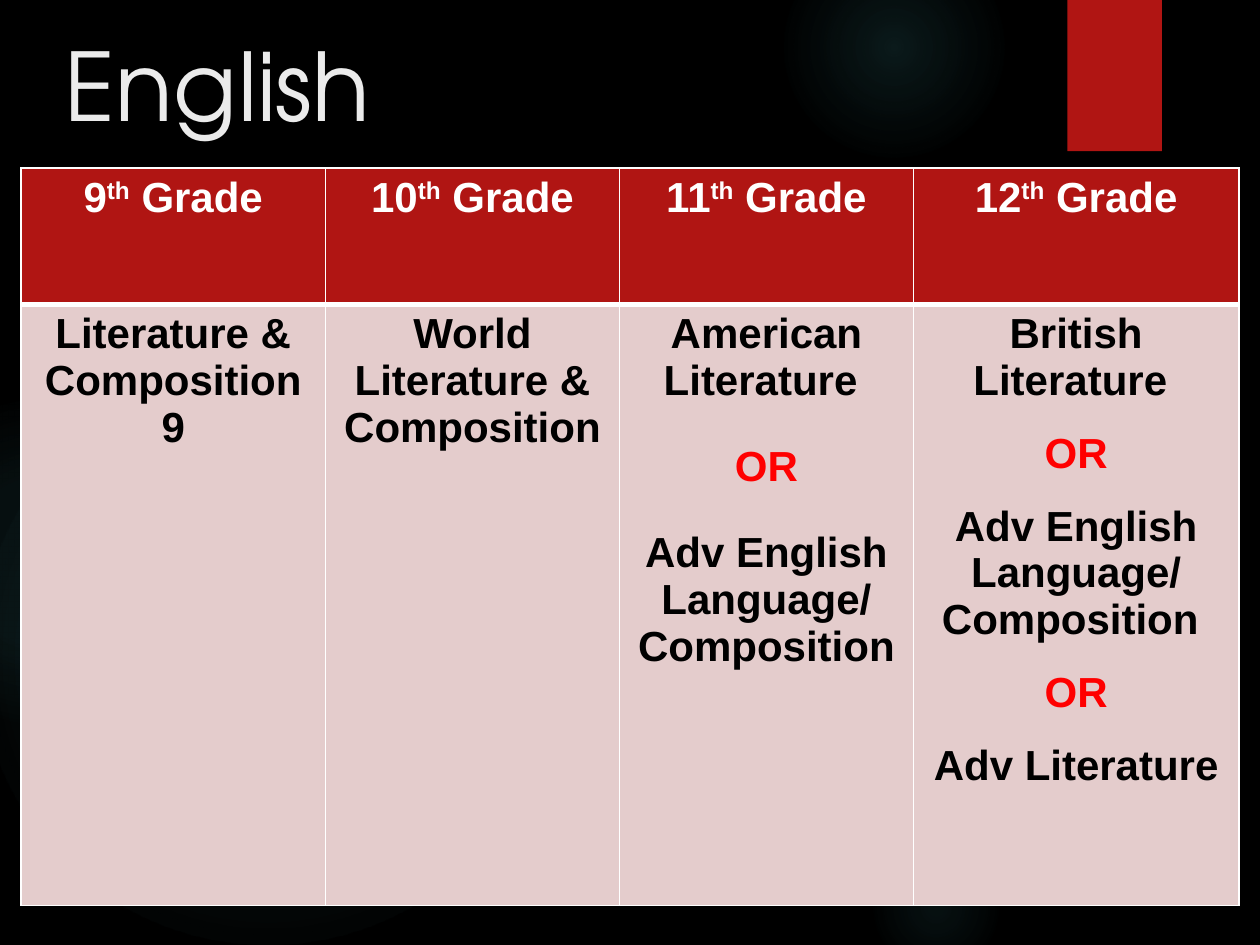
from lxml import etree
from pptx import Presentation
from pptx.dml.color import RGBColor
from pptx.enum.shapes import MSO_SHAPE as Shape
from pptx.enum.text import MSO_ANCHOR as Anchor, PP_ALIGN as Align
from pptx.oxml import parse_xml
from pptx.oxml.ns import nsdecls, qn
from pptx.util import Pt

BLACK = RGBColor(0x00, 0x00, 0x00)
WHITE = RGBColor(0xFF, 0xFF, 0xFF)
PALE = RGBColor(0xEB, 0xEB, 0xEB)
RED = RGBColor(0xB0, 0x15, 0x13)
BRIGHT = RGBColor(0xFF, 0x00, 0x00)
PINK = RGBColor(0xE4, 0xCC, 0xCC)
TEAL = RGBColor(0x50, 0xB9, 0xC1)

# left, top, size, then (position %, opacity %) stops
GLOWS = [
    (448, -36, 126, [(0, 14), (36, 7), (73, 0)]),
    (496, 480, 78, [(0, 9), (36, 5), (66, 0)]),
    (-12, 210, 330, [(0, 11), (36, 10), (75, 0)]),
    (-66, 228, 186, [(0, 8), (36, 8), (72, 0)]),
]
# grade, column width, gap around OR, courses
GRADES = [
    ("9", 174, 0, ["Literature & Composition 9"]),
    ("10", 168, 0, ["World Literature & Composition"]),
    ("11", 168, 22.3, ["American Literature ", "OR",
                       "Adv English Language/", "Composition"]),
    ("12", 186, 14.8, ["British Literature ", "OR", "Adv English Language/",
                       "Composition ", "OR", "Adv Literature"]),
]
ROWS = (78, 343.5)
LEFT, TOP = 12, 96


def write(para, text, size=24, font="Arial", color=BLACK, bold=True, raised=0):
    run = para.add_run()
    run.text = text
    run.font.size, run.font.name, run.font.bold = Pt(size), font, bold
    run.font.color.rgb = color
    if raised:
        run._r.get_or_add_rPr().set("baseline", str(raised * 1000))


def add_shape(slide, kind, left, top, width, height, color):
    shape = slide.shapes.add_shape(kind, Pt(left), Pt(top), Pt(width), Pt(height))
    shape.shadow.inherit = False
    shape.fill.solid()
    shape.fill.fore_color.rgb = color
    shape.line.fill.background()
    return shape


def add_glow(slide, left, top, size, stops):
    """Draw a circle that fades out from its centre."""
    glow = add_shape(slide, Shape.OVAL, left, top, size, size, TEAL)
    marks = "".join(
        f'<a:gs pos="{pos * 1000}"><a:srgbClr val="{TEAL}">'
        f'<a:alpha val="{alpha * 1000}"/></a:srgbClr></a:gs>'
        for pos, alpha in stops)
    fade = parse_xml(
        f'<a:gradFill {nsdecls("a")} rotWithShape="1"><a:gsLst>{marks}</a:gsLst>'
        '<a:path path="circle"><a:fillToRect l="50000" t="50000" r="50000" '
        'b="50000"/></a:path></a:gradFill>')
    props = glow._element.spPr
    props.replace(props.find(qn("a:solidFill")), fade)


def paint(cell, color, upper, lower):
    """Fill a cell and give it white borders."""
    cell.fill.solid()
    cell.fill.fore_color.rgb = color
    props = cell._tc.get_or_add_tcPr()
    for spot, (side, width) in enumerate(zip("LRTB", (1, 1, upper, lower))):
        line = etree.Element(qn(f"a:ln{side}"), w=str(Pt(width)))
        fill = etree.SubElement(line, qn("a:solidFill"))
        etree.SubElement(fill, qn("a:srgbClr"), val=str(WHITE))
        props.insert(spot, line)


def add_grades(slide):
    total = sum(width for _, width, _, _ in GRADES)
    table = slide.shapes.add_table(
        len(ROWS), len(GRADES), Pt(LEFT), Pt(TOP), Pt(total), Pt(sum(ROWS))).table
    for row, height in zip(table.rows, ROWS):
        row.height = Pt(height)
    for col, (grade, width, gap, courses) in enumerate(GRADES):
        table.columns[col].width = Pt(width)
        head, body = table.cell(0, col), table.cell(1, col)
        paint(head, RED, 1, 3)
        paint(body, PINK, 3, 1)

        para = head.text_frame.paragraphs[0]
        para.alignment = Align.CENTER
        for text, raised in ((grade, 0), ("th", 30), (" Grade", 0)):
            write(para, text, color=WHITE, raised=raised)

        frame = body.text_frame
        for spot, course in enumerate(courses):
            para = frame.add_paragraph() if spot else frame.paragraphs[0]
            para.alignment = Align.CENTER
            choice = course == "OR"
            if choice:
                para.space_before = para.space_after = Pt(gap)
            write(para, course, color=BRIGHT if choice else BLACK)


def main():
    deck = Presentation()
    deck.slide_width, deck.slide_height = Pt(720), Pt(540)
    slide = deck.slides.add_slide(deck.slide_layouts[6])
    slide.background.fill.solid()
    slide.background.fill.fore_color.rgb = BLACK

    for glow in GLOWS:
        add_glow(slide, *glow)
    add_shape(slide, Shape.RECTANGLE, 610, 0, 54, 86.4, RED)

    title = slide.shapes.add_textbox(Pt(30), Pt(12), Pt(660), Pt(113)).text_frame
    title.word_wrap = True
    title.vertical_anchor = Anchor.TOP
    write(title.paragraphs[0], "English", size=54, font="TeX Gyre Adventor",
          color=PALE, bold=False)

    add_grades(slide)
    deck.save("out.pptx")


if __name__ == "__main__":
    main()
